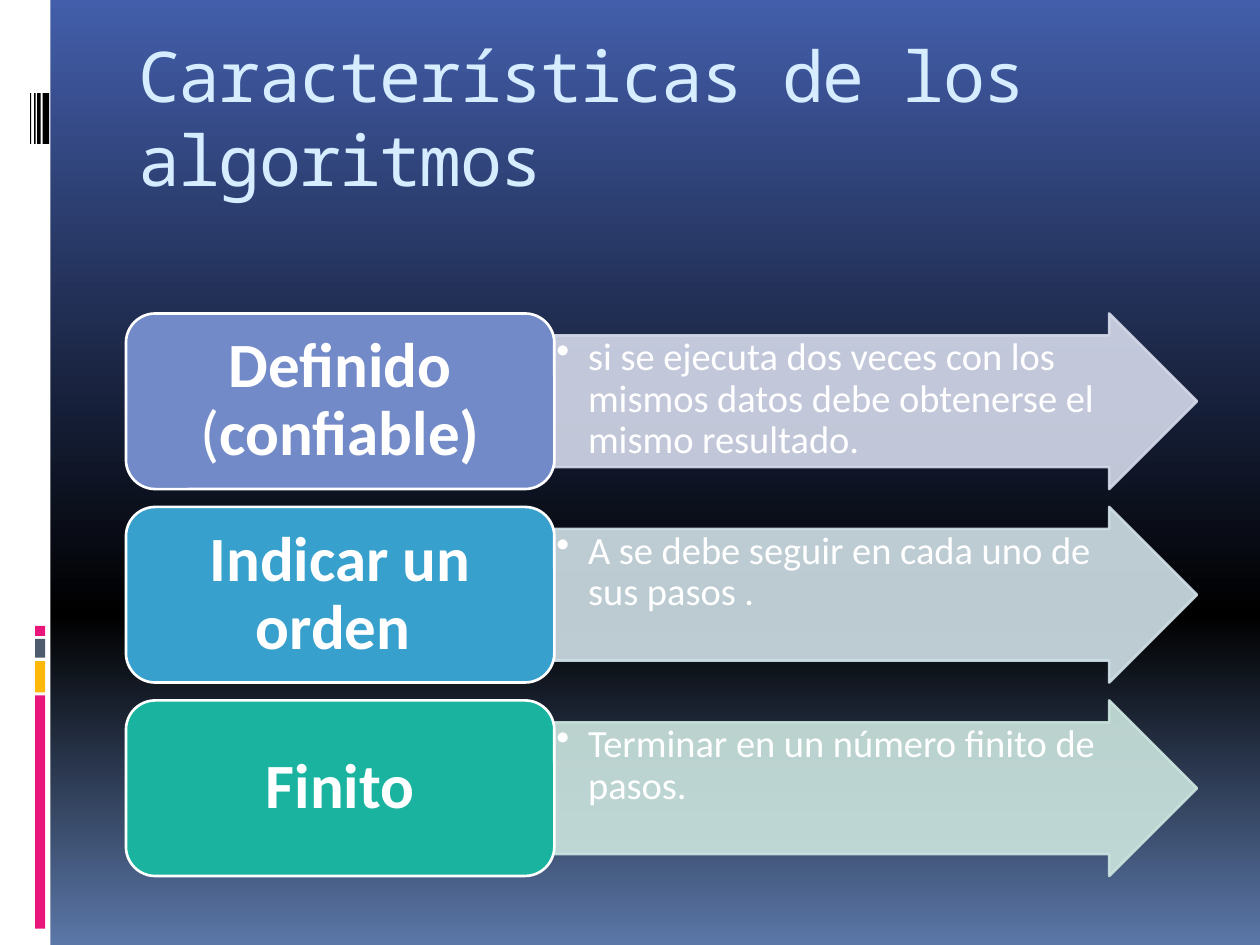
import copy
from dataclasses import dataclass

import pptx
import pptx.dml.color
import pptx.enum.shapes
import pptx.enum.text
import pptx.oxml.ns
import pptx.oxml.xmlchemy
import pptx.util
from lxml import etree

Cm, Pt = pptx.util.Cm, pptx.util.Pt
RGB = pptx.dml.color.RGBColor.from_string
SHAPE = pptx.enum.shapes.MSO_SHAPE
ANCHOR = pptx.enum.text.MSO_ANCHOR
ALIGN = pptx.enum.text.PP_ALIGN
qn = pptx.oxml.ns.qn


@dataclass(frozen=True)
class Theme:
    background: tuple = ((0, "435EAA"), (0.65, "000000"), (1, "5B77A8"))
    white: str = "FFFFFF"
    black: str = "000000"
    pink: str = "EA157A"
    amber: str = "FEB80A"
    slate: str = "4E5B6F"
    title: str = "D6ECFF"
    title_font: str = "Noto Sans Mono"
    body_font: str = "Calibri"
    title_size: int = 40
    label_size: int = 36
    detail_size: int = 22
    outline: float = 1.5


T = Theme()

# Label runs (text, bold), detail, label colour, arrow colour
FEATURES = [
    ([("Definido", True), (" (", False), ("confiable)", True)],
     "si se ejecuta dos veces con los mismos datos debe obtenerse el mismo resultado.",
     "738AC8", "D5DAEB"),
    ([("Indicar un orden ", True)],
     "A se debe seguir en cada uno de sus pasos .",
     "38A0CC", "D1E1E8"),
    ([("Finito", True)],
     "Terminar en un número finito de pasos.",
     "1AB39F", "CCE5DF"),
]


def add_shape(s, kind, box, fill, line=None):
    sp = s.shapes.add_shape(kind, *(Cm(v) for v in box))
    sp.shadow.inherit = False
    sp.fill.solid()
    sp.fill.fore_color.rgb = RGB(fill)
    if line:
        sp.line.color.rgb = RGB(line)
        sp.line.width = Pt(T.outline)
    else:
        sp.line.fill.background()
    return sp


def set_opacity(sp, percent):
    for color in sp._element.spPr.iter(qn("a:srgbClr")):
        etree.SubElement(color, qn("a:alpha")).set("val", str(percent * 1000))


def set_frame(tf, inset_x, inset_y, anchor):
    tf.word_wrap = True
    tf.margin_left = tf.margin_right = Cm(inset_x)
    tf.margin_top = tf.margin_bottom = Cm(inset_y)
    tf.vertical_anchor = anchor


def add_run(p, text, font, size, color, bold=False):
    r = p.add_run()
    r.text = text
    r.font.name = font
    r.font.size = Pt(size)
    r.font.color.rgb = RGB(color)
    r.font.bold = bold
    return r


def set_bullet(p, indent):
    pPr = p._p.get_or_add_pPr()
    pPr.set("marL", str(Cm(indent)))
    pPr.set("indent", str(-Cm(indent)))
    etree.SubElement(pPr, qn("a:buChar")).set("char", "•")


def fill_background(s):
    fill = s.background.fill
    fill.gradient()
    fill.gradient_angle = 270
    stops = next(s._element.iter(qn("a:gsLst")))
    stops.append(copy.deepcopy(stops[-1]))
    for stop, (position, color) in zip(fill.gradient_stops, T.background):
        stop.position = position
        stop.color.rgb = RGB(color)


def add_side_strip(s, x, y, w, h):
    add_shape(s, SHAPE.RECTANGLE, (x, y, w, h), T.white)
    # Coloured blocks: top, height
    for top, height, color in [(14.02, 4.7, T.pink), (13.33, 0.63, T.amber),
                               (12.88, 0.38, T.slate), (12.62, 0.2, T.pink)]:
        add_shape(s, SHAPE.RECTANGLE, (x + 0.71, y + top, 0.2, height), color)
    # Thin bars: left, width
    for left, width in [(0.86, 0.13), (0.75, 0.07), (0.69, 0.03), (0.61, 0.02)]:
        add_shape(s, SHAPE.RECTANGLE, (x + left, y + 1.88, width, 1.02), T.black)


def add_title(s, x, y, w, h):
    tf = s.shapes.add_textbox(Cm(x), Cm(y), Cm(w), Cm(h)).text_frame
    set_frame(tf, 0.25, 0.13, ANCHOR.TOP)
    r = add_run(tf.paragraphs[0], "Características de los algoritmos",
                T.title_font, T.title_size, T.title)
    r._r.get_or_add_rPr().set("spc", "-100")


def add_feature(s, x, y, w, h, label, detail, color, tint):
    label_w = w * 0.4

    # Arrow with the detail
    sp = add_shape(s, SHAPE.RIGHT_ARROW, (x + label_w, y, w - label_w, h), tint, tint)
    sp.adjustments[0], sp.adjustments[1] = 0.75, 0.5
    set_opacity(sp, 90)
    set_frame(sp.text_frame, 0.04, 0.04, ANCHOR.TOP)
    p = sp.text_frame.paragraphs[0]
    p.alignment = ALIGN.LEFT
    p.line_spacing = 0.9
    set_bullet(p, 0.64)
    add_run(p, detail, T.body_font, T.detail_size, T.white)

    # Rounded label
    sp = add_shape(s, SHAPE.ROUNDED_RECTANGLE, (x, y, label_w, h), color, T.white)
    set_frame(sp.text_frame, 0.38, 0.19, ANCHOR.MIDDLE)
    p = sp.text_frame.paragraphs[0]
    p.alignment = ALIGN.CENTER
    p.line_spacing = 0.9
    for text, bold in label:
        add_run(p, text, T.body_font, T.label_size, T.white, bold)


def add_features(s, x, y, w, h, gap):
    row_h = (h - gap * (len(FEATURES) - 1)) / len(FEATURES)
    for i, feature in enumerate(FEATURES):
        add_feature(s, x, y + i * (row_h + gap), w, row_h, *feature)


def main():
    prs = pptx.Presentation()
    prs.slide_width, prs.slide_height = Cm(25.4), Cm(19.05)
    s = prs.slides.add_slide(prs.slide_layouts[6])
    fill_background(s)
    add_side_strip(s, 0, 0, 1.02, 19.05)
    add_title(s, 2.54, 0.53, 21.59, 3.43)
    add_features(s, 2.54, 6.32, 21.59, 11.34, 0.36)
    prs.save("out.pptx")


if __name__ == "__main__":
    main()
